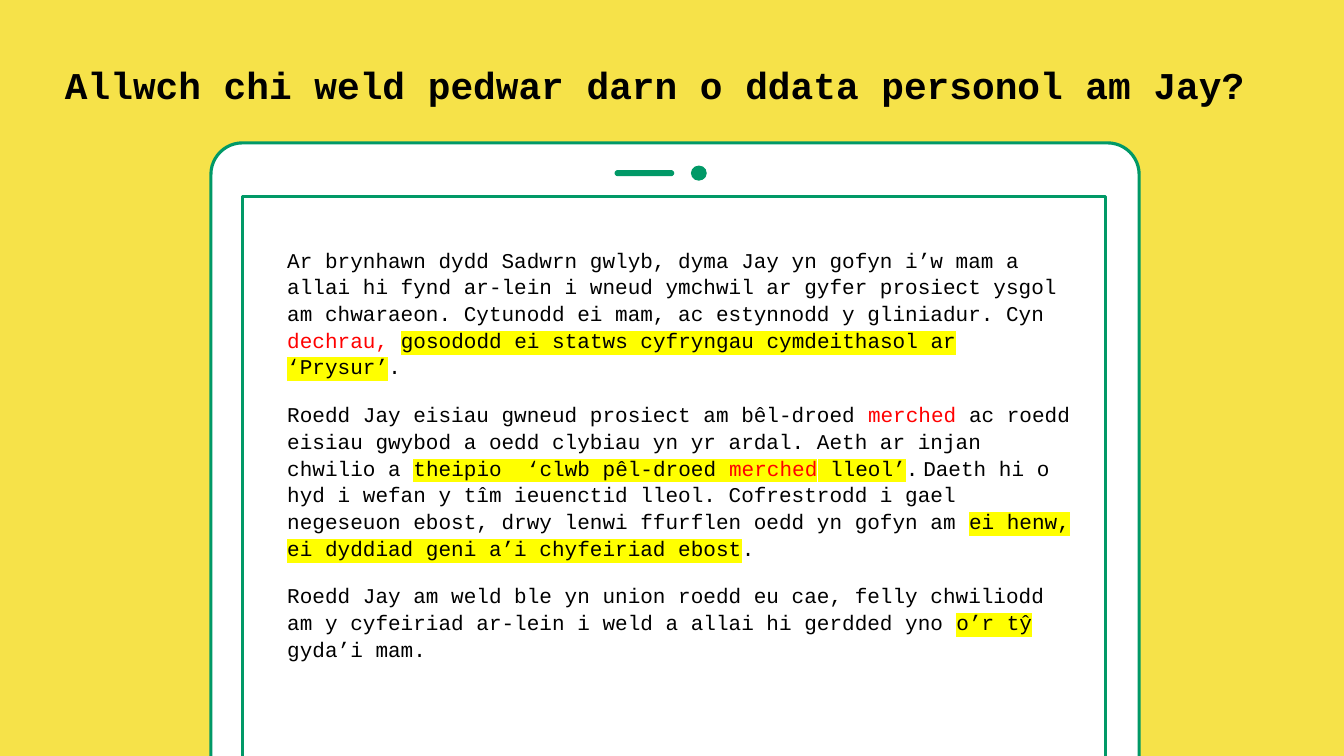
from lxml import etree
from pptx import Presentation, util as u
from pptx.dml.color import RGBColor
from pptx.enum import shapes, text
from pptx.oxml.ns import qn

YELLOW = RGBColor(0xF6, 0xE2, 0x49)
GREEN = RGBColor(0x01, 0x99, 0x67)
WHITE = RGBColor(0xFF, 0xFF, 0xFF)
BLACK = RGBColor(0, 0, 0)
RED = RGBColor(0xFF, 0, 0)
MARK = RGBColor(0xFF, 0xFF, 0)
FONT = "Courier New"
WIDE, HIGH = 17.78, 10

# Story runs: (words, style); r = red, m = marked, c = Calibri
STORY = [
    [("Ar brynhawn dydd Sadwrn gwlyb, dyma Jay yn gofyn i’w mam a allai hi "
      "fynd ar-lein i wneud ymchwil ar gyfer prosiect ysgol am chwaraeon. "
      "Cytunodd ei mam, ac estynnodd y gliniadur. Cyn ", ""),
     ("dechrau, ", "r"),
     ("gosododd ei statws cyfryngau cymdeithasol ar ‘Prysur’", "m"),
     (".", "")],
    [("Roedd Jay eisiau gwneud prosiect am bêl-droed ", ""),
     ("merched", "r"),
     (" ac roedd eisiau gwybod a oedd clybiau yn yr ardal. "
      "Aeth ar injan chwilio a ", ""),
     ("theipio  ‘clwb pêl-droed ", "m"),
     ("merched", "rm"),
     (" lleol’", "m"),
     (".", ""),
     (" ", "c"),
     ("Daeth hi o hyd i wefan y tîm ieuenctid lleol. Cofrestrodd i gael "
      "negeseuon ebost, drwy lenwi ffurflen oedd yn gofyn am ", ""),
     ("ei henw, ei dyddiad geni a’i chyfeiriad ebost", "m"),
     (".", "")],
    [("Roedd Jay am weld ble yn union roedd eu cae, felly chwiliodd am y "
      "cyfeiriad ar-lein i weld a allai hi gerdded yno ", ""),
     ("o’r tŷ ", "m"),
     ("gyda’i mam.", "")],
]


def place(shape, box):
    shape.left, shape.top, shape.width, shape.height = map(u.Inches, box)


def add_run(para, words, size, style="", bold=False):
    run = para.add_run()
    run.text = words
    font = run.font
    font.size, font.bold = u.Pt(size), bold
    font.name = "Calibri" if "c" in style else FONT
    font.color.rgb = RED if "r" in style else BLACK
    if "m" in style:
        light = etree.Element(qn("a:highlight"))
        etree.SubElement(light, qn("a:srgbClr")).set("val", str(MARK))
        run._r.rPr.find(qn("a:latin")).addprevious(light)


def set_para(para, after=0):
    para.alignment = text.PP_ALIGN.LEFT
    para.line_spacing = 1.06
    para.space_before, para.space_after = u.Pt(0), u.Pt(after)


def add_title(slide, box):
    title = slide.shapes.title
    place(title, box)
    frame = title.text_frame
    frame.word_wrap = True
    frame.auto_size = text.MSO_AUTO_SIZE.NONE
    frame.vertical_anchor = text.MSO_ANCHOR.MIDDLE
    para = frame.paragraphs[0]
    set_para(para)
    add_run(para, "Allwch chi weld pedwar darn o ddata personol am Jay?",
            36, bold=True)


def add_part(slide, kind, box, fill, line=None, bend=None):
    part = slide.shapes.add_shape(kind, *map(u.Inches, box))
    part.shadow.inherit = False
    part.fill.solid()
    part.fill.fore_color.rgb = fill
    if line:
        part.line.color.rgb = line
        part.line.width = u.Pt(3)
    else:
        part.line.fill.background()
    if bend is not None:
        part.adjustments[0] = bend


def add_tablet(slide, box):
    x, y, w, h = box
    kind = shapes.MSO_SHAPE
    # Body and screen run past the foot of the slide
    add_part(slide, kind.ROUNDED_RECTANGLE, box, WHITE, GREEN, 0.034)
    add_part(slide, kind.ROUNDED_RECTANGLE,
             (x + 0.42, y + 0.71, w - 0.87, h - 1.88), WHITE, GREEN, 0)
    # Speaker and camera
    add_part(slide, kind.ROUNDED_RECTANGLE,
             (x + 5.34, y + 0.36, 0.79, 0.08), GREEN, bend=0.5)
    add_part(slide, kind.OVAL, (x + 6.35, y + 0.3, 0.21, 0.2), GREEN)


def add_story(slide, box):
    body = slide.placeholders[1]
    place(body, box)
    frame = body.text_frame
    frame.word_wrap = True
    frame.auto_size = text.MSO_AUTO_SIZE.NONE
    frame.vertical_anchor = text.MSO_ANCHOR.TOP
    frame.margin_left = frame.margin_right = 0
    frame.margin_top = frame.margin_bottom = 0
    for i, runs in enumerate(STORY):
        para = frame.add_paragraph() if i else frame.paragraphs[0]
        set_para(para, after=20)
        props = para._p.get_or_add_pPr()
        props.set("marL", "0")
        props.set("indent", "0")
        etree.SubElement(props, qn("a:buNone"))
        for words, style in runs:
            add_run(para, words, 20, style)
    # Bring the story in front of the tablet
    slide.shapes._spTree.append(body._element)


def main():
    deck = Presentation()
    deck.slide_width, deck.slide_height = u.Inches(WIDE), u.Inches(HIGH)
    slide = deck.slides.add_slide(deck.slide_layouts[1])
    slide.background.fill.solid()
    slide.background.fill.fore_color.rgb = YELLOW
    add_title(slide, (0.76, 0.67, 16.34, 0.86))
    add_tablet(slide, (2.79, 1.89, 12.28, 12.64))
    add_story(slide, (3.8, 3.25, 10.41, 5.27))
    deck.save("out.pptx")


if __name__ == "__main__":
    main()
